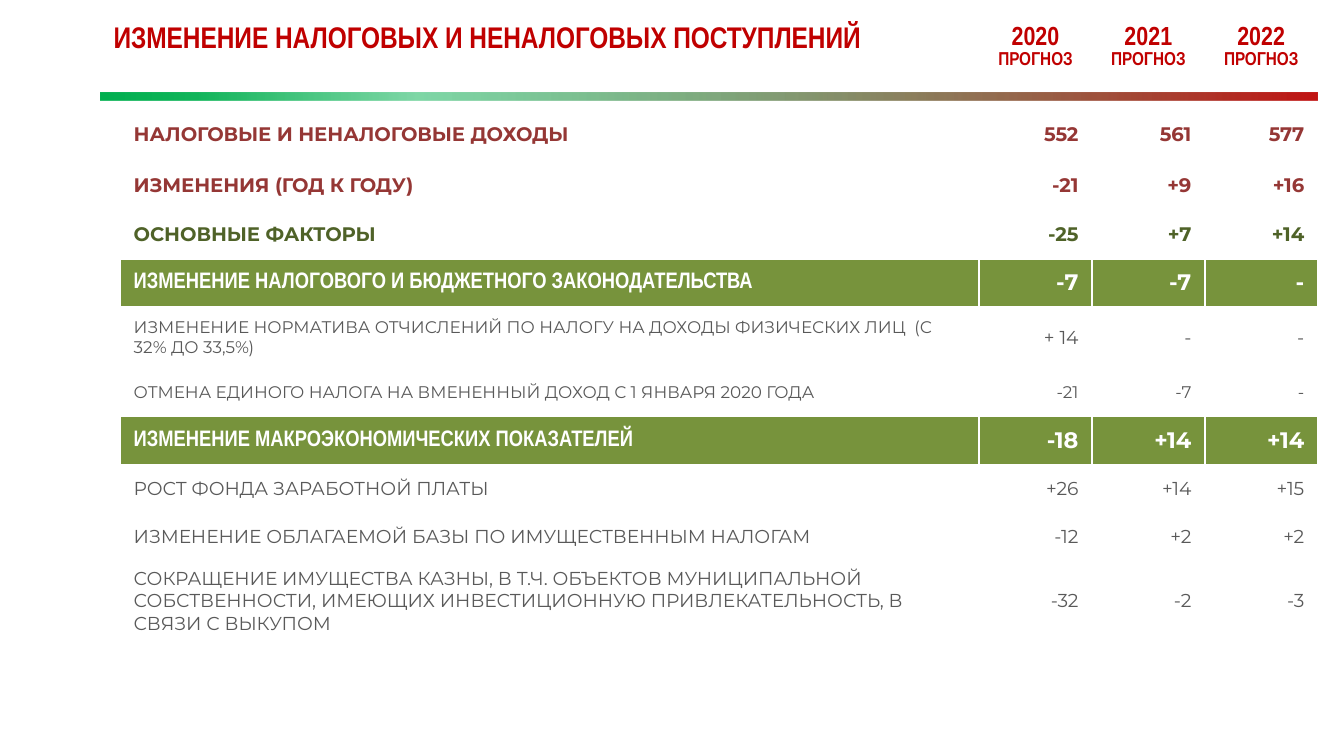
from dataclasses import dataclass

from lxml.etree import SubElement
from pptx import Presentation
from pptx.dml.color import RGBColor
from pptx.enum.shapes import MSO_SHAPE
from pptx.enum.text import MSO_ANCHOR, PP_ALIGN
from pptx.oxml.ns import qn
from pptx.util import Inches, Pt

COLOURS = {
    "white": "FFFFFF",
    "title": "C00000",
    "total": "953735",
    "factors": "4F6228",
    "band": "77933C",
    "detail": "595959",
    "red": "C21414",
    "green": "00B050",
}
NARROW, WIDE = "Arial Narrow", "Montserrat"
SLIDE_WIDTH = Inches(10)
SLIDE_HEIGHT = SLIDE_WIDTH * 9 // 16

# Shares of the slide, in percent
CONTENT_LEFT, CONTENT_WIDTH = 7.45, 90.6
YEAR_WIDTH = 8.4
HEADER_COLUMNS = [65.4] + [YEAR_WIDTH] * 3
BODY_COLUMNS = [6.2, 63.9] + [YEAR_WIDTH] * 3
BODY_LEFT = CONTENT_LEFT + CONTENT_WIDTH - sum(BODY_COLUMNS)

YEARS = ["2020", "2021", "2022"]


@dataclass(frozen=True)
class Style:
    size: float
    colour: str
    font: str = WIDE
    bold: bool = True


@dataclass(frozen=True)
class Factor:
    label: str
    values: tuple[str, str, str]
    label_style: Style
    value_style: Style
    height: float = 6.35
    fill: str | None = None


@dataclass(frozen=True)
class Stop:
    position: int
    colour: str
    opacity: int = 100


TITLE = Style(16, "title", NARROW)
YEAR = Style(14, "title", NARROW)
FORECAST = Style(10, "title", NARROW)
TOTAL = Style(10.5, "total")
FACTORS = Style(10.5, "factors")
BAND_LABEL = Style(12, "white", NARROW)
BAND_VALUE = Style(12, "white")
SMALL = Style(9, "detail", bold=False)
DETAIL = Style(10, "detail", bold=False)

ROWS = [
    Factor("НАЛОГОВЫЕ И НЕНАЛОГОВЫЕ ДОХОДЫ", ("552", "561", "577"), TOTAL, TOTAL, 6.75),
    Factor("ИЗМЕНЕНИЯ (ГОД К ГОДУ)", ("-21", "+9", "+16"), TOTAL, TOTAL, 6.75),
    Factor("ОСНОВНЫЕ ФАКТОРЫ", ("-25", "+7", "+14"), FACTORS, FACTORS),
    Factor("ИЗМЕНЕНИЕ НАЛОГОВОГО И БЮДЖЕТНОГО ЗАКОНОДАТЕЛЬСТВА",
           ("-7", "-7", "-"), BAND_LABEL, BAND_VALUE, fill="band"),
    Factor("ИЗМЕНЕНИЕ НОРМАТИВА ОТЧИСЛЕНИЙ ПО НАЛОГУ НА ДОХОДЫ ФИЗИЧЕСКИХ ЛИЦ  (С 32% ДО 33,5%)",
           ("+ 14", "-", "-"), SMALL, DETAIL, 8.15),
    Factor("ОТМЕНА ЕДИНОГО НАЛОГА НА ВМЕНЕННЫЙ ДОХОД С 1 ЯНВАРЯ 2020 ГОДА",
           ("-21", "-7", "-"), SMALL, SMALL),
    Factor("ИЗМЕНЕНИЕ МАКРОЭКОНОМИЧЕСКИХ ПОКАЗАТЕЛЕЙ",
           ("-18", "+14", "+14"), BAND_LABEL, BAND_VALUE, fill="band"),
    Factor("РОСТ ФОНДА ЗАРАБОТНОЙ ПЛАТЫ", ("+26", "+14", "+15"), DETAIL, DETAIL),
    Factor("ИЗМЕНЕНИЕ ОБЛАГАЕМОЙ БАЗЫ ПО ИМУЩЕСТВЕННЫМ НАЛОГАМ",
           ("-12", "+2", "+2"), DETAIL, DETAIL),
    Factor("СОКРАЩЕНИЕ ИМУЩЕСТВА КАЗНЫ, В Т.Ч. ОБЪЕКТОВ МУНИЦИПАЛЬНОЙ СОБСТВЕННОСТИ, "
           "ИМЕЮЩИХ ИНВЕСТИЦИОННУЮ ПРИВЛЕКАТЕЛЬНОСТЬ, В СВЯЗИ С ВЫКУПОМ",
           ("-32", "-2", "-3"), DETAIL, DETAIL, 8.7),
]
RULE_STOPS = [Stop(0, "green"), Stop(8, "green", 93), Stop(26, "green", 50), Stop(100, "red")]


def across(percent: float) -> int:
    return round(SLIDE_WIDTH * percent / 100)


def down(percent: float) -> int:
    return round(SLIDE_HEIGHT * percent / 100)


def add_grid(slide, left: float, top: float, columns: list[float], rows: list[float]):
    """Add a table without banding, sized in percent of the slide."""
    table = slide.shapes.add_table(
        len(rows), len(columns), across(left), down(top),
        across(sum(columns)), down(sum(rows))).table
    table.first_row = table.horz_banding = False
    for column, width in zip(table.columns, columns):
        column.width = across(width)
    for row, height in zip(table.rows, rows):
        row.height = down(height)
    return table


def format_cell(cell, fill: str | None, bottom_width: float = 1) -> None:
    properties = cell._tc.get_or_add_tcPr()
    for side, width in {"L": 1, "R": 1, "T": 1, "B": bottom_width}.items():
        line = SubElement(properties, qn(f"a:ln{side}"), w=str(Pt(width)))
        solid = SubElement(line, qn("a:solidFill"))
        SubElement(solid, qn("a:srgbClr"), val=COLOURS["white"])
    if fill:
        cell.fill.solid()
        cell.fill.fore_color.rgb = RGBColor.from_string(COLOURS[fill])
    else:
        cell.fill.background()
    cell.vertical_anchor = MSO_ANCHOR.MIDDLE


def write(cell, lines: list[tuple[str, Style]], alignment=PP_ALIGN.LEFT) -> None:
    frame = cell.text_frame
    for index, (text, style) in enumerate(lines):
        paragraph = frame.add_paragraph() if index else frame.paragraphs[0]
        paragraph.alignment = alignment
        run = paragraph.add_run()
        run.text = text
        font_format = {"name": style.font, "size": Pt(style.size), "bold": style.bold}
        for attribute, value in font_format.items():
            setattr(run.font, attribute, value)
        run.font.color.rgb = RGBColor.from_string(COLOURS[style.colour])


def shrink_empty(cell, size: int) -> None:
    """Keep an empty cell from stretching its row."""
    SubElement(cell.text_frame.paragraphs[0]._p, qn("a:endParaRPr"), sz=str(size * 100))


def add_rule(slide) -> None:
    rule = slide.shapes.add_shape(
        MSO_SHAPE.RECTANGLE, across(CONTENT_LEFT), down(12.2),
        across(CONTENT_WIDTH), down(1.07))
    rule.shadow.inherit = False
    rule.line.fill.background()
    rule.fill.gradient()
    rule.fill.gradient_angle = 0
    stop_list = rule.element.spPr.find(qn("a:gradFill")).find(qn("a:gsLst"))
    for old_stop in list(stop_list):
        stop_list.remove(old_stop)
    for stop in RULE_STOPS:
        node = SubElement(stop_list, qn("a:gs"), pos=str(stop.position * 1000))
        colour = SubElement(node, qn("a:srgbClr"), val=COLOURS[stop.colour])
        if stop.opacity < 100:
            SubElement(colour, qn("a:alpha"), val=str(stop.opacity * 1000))


def add_factors(slide) -> None:
    table = add_grid(slide, BODY_LEFT, 14.4, BODY_COLUMNS, [row.height for row in ROWS])
    for index, row in enumerate(ROWS):
        margin, label, *values = table.rows[index].cells
        bottom_width = 3 if index == 0 else 1
        format_cell(margin, None, bottom_width)
        shrink_empty(margin, 9)
        for cell in (label, *values):
            format_cell(cell, row.fill, bottom_width)
        write(label, [(row.label, row.label_style)])
        for cell, value in zip(values, row.values):
            write(cell, [(value, row.value_style)], PP_ALIGN.RIGHT)


def add_header(slide) -> None:
    table = add_grid(slide, CONTENT_LEFT, 2.67, HEADER_COLUMNS, [7.3])
    title, *years = table.rows[0].cells
    for cell in (title, *years):
        format_cell(cell, "white", bottom_width=3)
    title.vertical_anchor = MSO_ANCHOR.TOP
    write(title, [("ИЗМЕНЕНИЕ НАЛОГОВЫХ И НЕНАЛОГОВЫХ ПОСТУПЛЕНИЙ", TITLE)])
    for cell, year in zip(years, YEARS):
        write(cell, [(year, YEAR), ("ПРОГНОЗ", FORECAST)], PP_ALIGN.CENTER)


def main() -> None:
    presentation = Presentation()
    presentation.slide_width, presentation.slide_height = SLIDE_WIDTH, SLIDE_HEIGHT
    slide = presentation.slides.add_slide(presentation.slide_layouts[6])
    add_rule(slide)
    add_factors(slide)
    add_header(slide)
    presentation.save("out.pptx")


if __name__ == "__main__":
    main()
